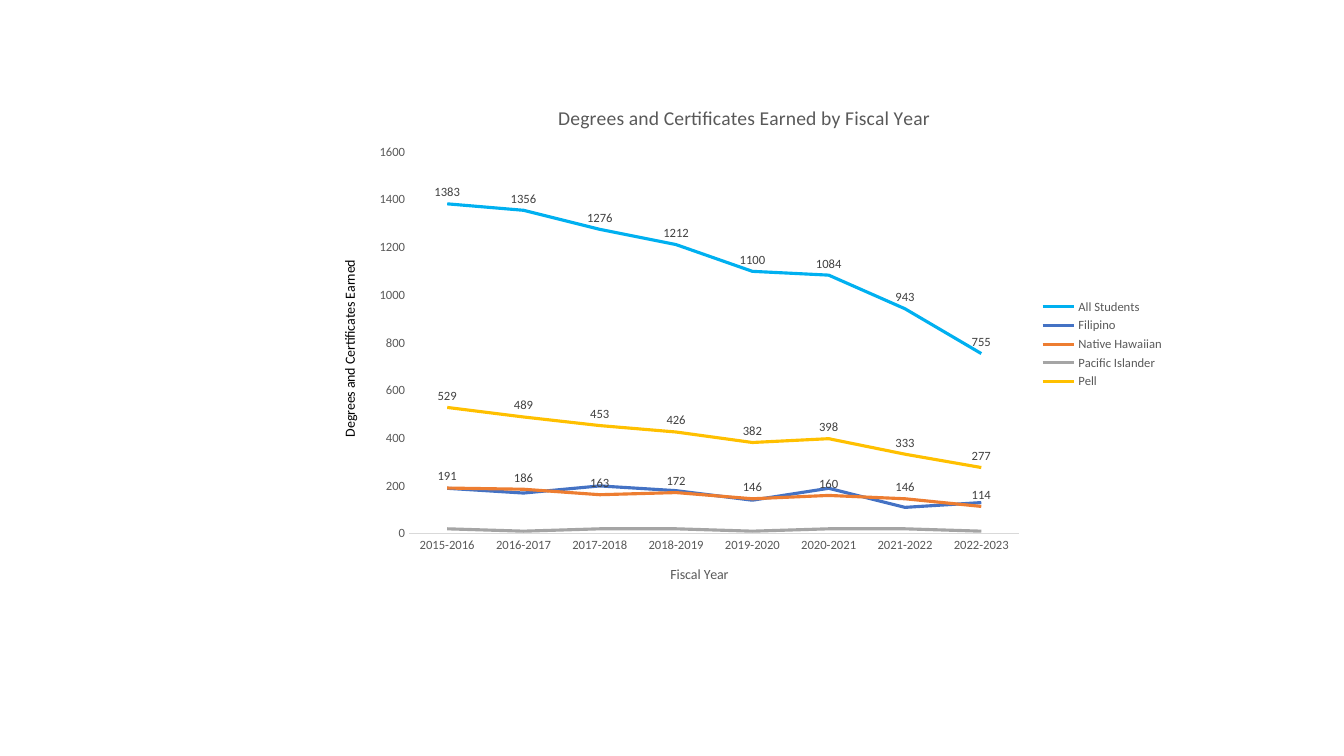
from lxml import etree
from pptx import Presentation
from pptx import util as u
from pptx.chart.data import CategoryChartData
from pptx.dml.color import RGBColor
from pptx.enum import chart as c
from pptx.oxml.ns import qn

# Content
CHART_TITLE = "Degrees and Certificates Earned by Fiscal Year"
CATEGORY_TITLE = "Fiscal Year"
VALUE_TITLE = "Degrees and Certificates Earned"
YEARS = [f"{year}-{year + 1}" for year in range(2015, 2023)]
# name, values, line colour, whether values are labelled
SERIES = [
    ("All Students", (1383, 1356, 1276, 1212, 1100, 1084, 943, 755), "00B0F0", True),
    ("Filipino", (190, 170, 200, 180, 140, 190, 110, 130), "4472C4", False),
    ("Native Hawaiian", (191, 186, 163, 172, 146, 160, 146, 114), "ED7D31", True),
    ("Pacific Islander", (20, 10, 20, 20, 10, 20, 20, 10), "A5A5A5", False),
    ("Pell", (529, 489, 453, 426, 382, 398, 333, 277), "FFC000", True),
]

THEME = {
    "font": "Calibri",
    "text": "595959", "label": "404040", "black": "000000", "axis": "D9D9D9",
    "title_size": 14, "axis_title_size": 10, "small_size": 9,
    "series_width": 2.25, "axis_width": 0.75,
}
SLIDE_SIZE = (960, 540)
CHART_BOX = (224.64, 60.48, 614.16, 370.8)
PLOT_AREA = {"x": 0.11, "y": 0.13, "w": 0.71, "h": 0.735}


def set_font(font, size, colour):
    values = {"name": THEME["font"], "size": u.Pt(THEME[size]), "bold": False}
    for name, value in values.items():
        setattr(font, name, value)
    font.color.rgb = RGBColor.from_string(THEME[colour])


def set_title(owner, wording, size, colour):
    frame = (owner.chart_title if hasattr(owner, "chart_title") else owner.axis_title).text_frame
    frame.text = wording
    set_font(frame.paragraphs[0].runs[0].font, size, colour)


def set_line(line, colour, width):
    line.color.rgb = RGBColor.from_string(colour)
    line.width = u.Pt(width)


def place_plot(chart):
    """Fix the inner plot area as fractions of the chart."""
    plot_area = chart._chartSpace.chart.plotArea
    for old_layout in plot_area.findall(qn("c:layout")):
        plot_area.remove(old_layout)
    layout = etree.Element(qn("c:layout"))
    manual = etree.SubElement(layout, qn("c:manualLayout"))
    settings = {"layoutTarget": "inner", "xMode": "edge", "yMode": "edge", **PLOT_AREA}
    for name, value in settings.items():
        etree.SubElement(manual, qn(f"c:{name}")).set("val", str(value))
    plot_area.insert(0, layout)


def add_degree_chart(slide):
    data = CategoryChartData()
    data.categories = YEARS
    for name, values, _, _ in SERIES:
        data.add_series(name, values)
    box = [u.Pt(length) for length in CHART_BOX]
    chart = slide.shapes.add_chart(c.XL_CHART_TYPE.LINE, *box, data).chart
    set_font(chart.font, "axis_title_size", "black")
    set_title(chart, CHART_TITLE, "title_size", "text")
    chart.chart_title.include_in_layout = False
    place_plot(chart)

    # Axes
    category_axis, value_axis = chart.category_axis, chart.value_axis
    for axis, wording, colour in ((category_axis, CATEGORY_TITLE, "text"),
                                  (value_axis, VALUE_TITLE, "black")):
        set_title(axis, wording, "axis_title_size", colour)
        set_font(axis.tick_labels.font, "small_size", "text")
        axis.has_major_gridlines = False
        axis.major_tick_mark = axis.minor_tick_mark = c.XL_TICK_MARK.NONE
    set_line(category_axis.format.line, THEME["axis"], THEME["axis_width"])
    value_axis.format.line.fill.background()
    for name, value in {"minimum_scale": 0, "maximum_scale": 1600, "major_unit": 200}.items():
        setattr(value_axis, name, value)

    # Legend
    chart.has_legend = True
    chart.legend.position = c.XL_LEGEND_POSITION.RIGHT
    chart.legend.include_in_layout = False
    set_font(chart.legend.font, "small_size", "text")

    # Lines and value labels
    chart.plots[0].vary_by_categories = False
    for series, (_, _, colour, labelled) in zip(chart.plots[0].series, SERIES):
        set_line(series.format.line, colour, THEME["series_width"])
        series.smooth = False
        series.marker.style = c.XL_MARKER_STYLE.NONE
        if labelled:
            labels = series.data_labels
            labels.show_value = True
            labels.position = c.XL_LABEL_POSITION.ABOVE
            set_font(labels.font, "small_size", "label")


def main():
    presentation = Presentation()
    presentation.slide_width, presentation.slide_height = map(u.Pt, SLIDE_SIZE)
    slide = presentation.slides.add_slide(presentation.slide_layouts[6])
    add_degree_chart(slide)
    presentation.save("out.pptx")


if __name__ == "__main__":
    main()
